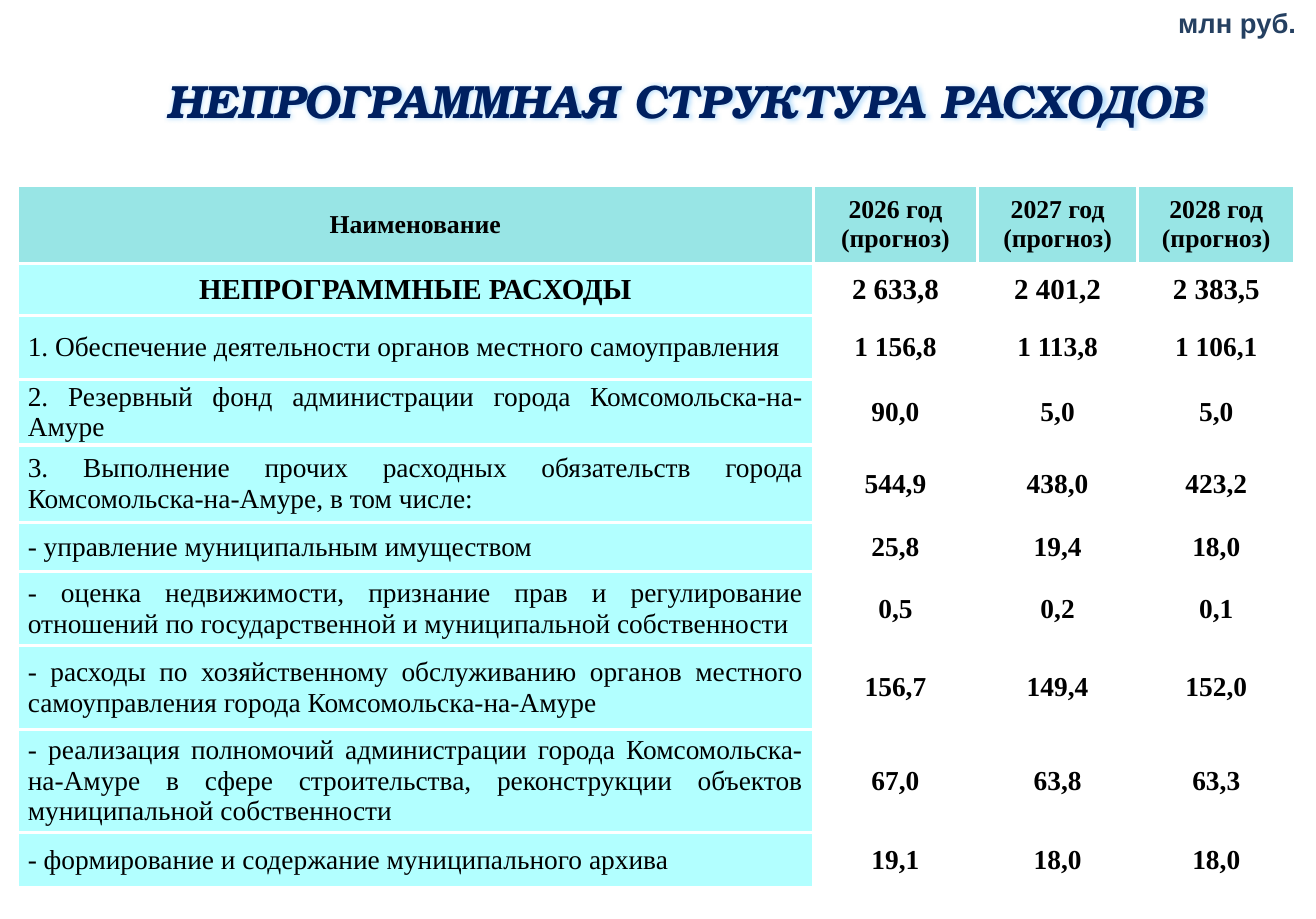
"""Build the slide on the structure of non-programme spending."""
import pptx
import pptx.dml.color
import pptx.enum.text
import pptx.oxml
import pptx.oxml.ns
import pptx.util
from pptx.util import Inches

RGBColor = pptx.dml.color.RGBColor
ALIGN = pptx.enum.text.PP_ALIGN
ANCHOR = pptx.enum.text.MSO_ANCHOR

NAVY = RGBColor(0x00, 0x20, 0x60)
SLATE = RGBColor(0x25, 0x40, 0x61)
BLACK = RGBColor(0x00, 0x00, 0x00)
WHITE = RGBColor(0xFF, 0xFF, 0xFF)
TEAL = RGBColor(0x33, 0xCC, 0xCC)
CYAN = RGBColor(0x66, 0xFF, 0xFF)
GLOW = RGBColor(0x4B, 0xAC, 0xF6)

COLUMN_WIDTHS = [6.87, 1.42, 1.38, 1.36]
ROW_HEIGHTS = [0.63, 0.45, 0.55, 0.53, 0.67, 0.39, 0.64, 0.72, 0.89, 0.48]
HEADINGS = ["Наименование", "2026 год (прогноз)", "2027 год (прогноз)", "2028 год (прогноз)"]
TOTALS = ["НЕПРОГРАММНЫЕ РАСХОДЫ", "2 633,8", "2 401,2", "2 383,5"]
EXPENSES = [
    ["1. Обеспечение деятельности органов местного самоуправления",
     "1 156,8", "1 113,8", "1 106,1"],
    ["2. Резервный фонд администрации города Комсомольска-на-Амуре",
     "90,0", "5,0", "5,0"],
    ["3. Выполнение прочих расходных обязательств города Комсомольска-на-Амуре, в том числе:",
     "544,9", "438,0", "423,2"],
    ["- управление муниципальным имуществом",
     "25,8", "19,4", "18,0"],
    ["- оценка недвижимости, признание прав и регулирование отношений "
     "по государственной и муниципальной собственности",
     "0,5", "0,2", "0,1"],
    ["- расходы по хозяйственному обслуживанию органов местного самоуправления "
     "города Комсомольска-на-Амуре",
     "156,7", "149,4", "152,0"],
    ["- реализация полномочий администрации города Комсомольска-на-Амуре "
     "в сфере строительства, реконструкции объектов муниципальной собственности",
     "67,0", "63,8", "63,3"],
    ["- формирование и содержание муниципального архива",
     "19,1", "18,0", "18,0"],
]


def parse_drawing(tag, content):
    """Return a DrawingML element with the given opening tag and content."""
    namespace = pptx.oxml.ns.nsdecls("a")
    return pptx.oxml.parse_xml(f"<a:{tag} {namespace}>{content}</a:{tag.split()[0]}>")


def style_paragraph(paragraph, font_name, size, color, bold=True, italic=False, align=None):
    """Set the alignment and the font of a paragraph."""
    paragraph.alignment = align
    font = paragraph.font
    font.name, font.size = font_name, pptx.util.Pt(size)
    font.bold, font.italic = bold, italic
    font.color.rgb = color


def set_margins(target, horizontal, vertical):
    """Set equal side margins and equal top and bottom margins."""
    target.margin_left = target.margin_right = Inches(horizontal)
    target.margin_top = target.margin_bottom = Inches(vertical)


def add_text(slide, text, left, top, width, height, vertical_margin, wrap, anchor):
    """Add a text box and return its paragraph."""
    box = slide.shapes.add_textbox(Inches(left), Inches(top), Inches(width), Inches(height))
    frame = box.text_frame
    frame.word_wrap, frame.vertical_anchor = wrap, anchor
    set_margins(frame, 0.12, vertical_margin)
    frame.text = text
    return frame.paragraphs[0]


def add_glow(paragraph):
    """Put a soft blue glow around the text of a paragraph."""
    glow = (f'<a:glow rad="63500"><a:srgbClr val="{GLOW}">'
            '<a:alpha val="40000"/></a:srgbClr></a:glow>')
    for run in paragraph.runs:
        run._r.get_or_add_rPr().append(parse_drawing("effectLst", glow))


def fill_cell(cell, color):
    """Fill a cell with a half-transparent colour, or leave it clear."""
    if color is None:
        cell.fill.background()
        return
    cell.fill.solid()
    cell.fill.fore_color.rgb = color
    shade = cell._tc.tcPr.find(".//" + pptx.oxml.ns.qn("a:srgbClr"))
    shade.append(parse_drawing('alpha val="50000"', ""))


def border_cell(cell):
    """Draw white borders on all sides of a cell."""
    line = f'<a:solidFill><a:srgbClr val="{WHITE}"/></a:solidFill>'
    for index, side in enumerate("LRTB"):
        cell._tc.tcPr.insert(index, parse_drawing(f'ln{side} w="28575"', line))


def add_expense_table(slide):
    """Add the table of expenses by year."""
    rows = [HEADINGS, TOTALS, *EXPENSES]
    frame = slide.shapes.add_table(
        len(rows), len(HEADINGS), Inches(0.15), Inches(1.6),
        Inches(sum(COLUMN_WIDTHS)), Inches(sum(ROW_HEIGHTS)))
    table = frame.table
    table.first_row = table.horz_banding = False
    for column, width in zip(table.columns, COLUMN_WIDTHS):
        column.width = Inches(width)
    for row, height in zip(table.rows, ROW_HEIGHTS):
        row.height = Inches(height)

    for row_index, texts in enumerate(rows):
        size = {0: 16, 1: 18}.get(row_index, 17)
        for column_index, text in enumerate(texts):
            is_heading = row_index == 0
            is_label = column_index == 0 and not is_heading
            is_expense = is_label and row_index > 1
            cell = table.cell(row_index, column_index)
            cell.text = text
            cell.vertical_anchor = ANCHOR.MIDDLE
            set_margins(cell, *((0.09, 0) if is_label else (0.11, 0.07)))
            style_paragraph(cell.text_frame.paragraphs[0], "Times New Roman", size, BLACK,
                            bold=not is_expense,
                            align=ALIGN.JUSTIFY if is_expense else ALIGN.CENTER)
            fill_cell(cell, TEAL if is_heading else CYAN if is_label else None)
            border_cell(cell)


def main():
    """Build and save the slide."""
    presentation = pptx.Presentation()
    presentation.slide_width, presentation.slide_height = Inches(11.36), Inches(7.93)
    slide = presentation.slides.add_slide(presentation.slide_layouts[6])

    title = add_text(slide, "НЕПРОГРАММНАЯ СТРУКТУРА РАСХОДОВ",
                     0.95, 0.2, 9.93, 1.02, 0.12, True, ANCHOR.BOTTOM)
    style_paragraph(title, "TeX Gyre Bonum", 29, NAVY, italic=True, align=ALIGN.CENTER)
    add_glow(title)

    add_expense_table(slide)

    unit = add_text(slide, "млн руб.", 10.05, -0.01, 1.28, 0.41, 0.06, False, ANCHOR.TOP)
    style_paragraph(unit, "Arial", 17, SLATE)

    presentation.save("out.pptx")


if __name__ == "__main__":
    main()
